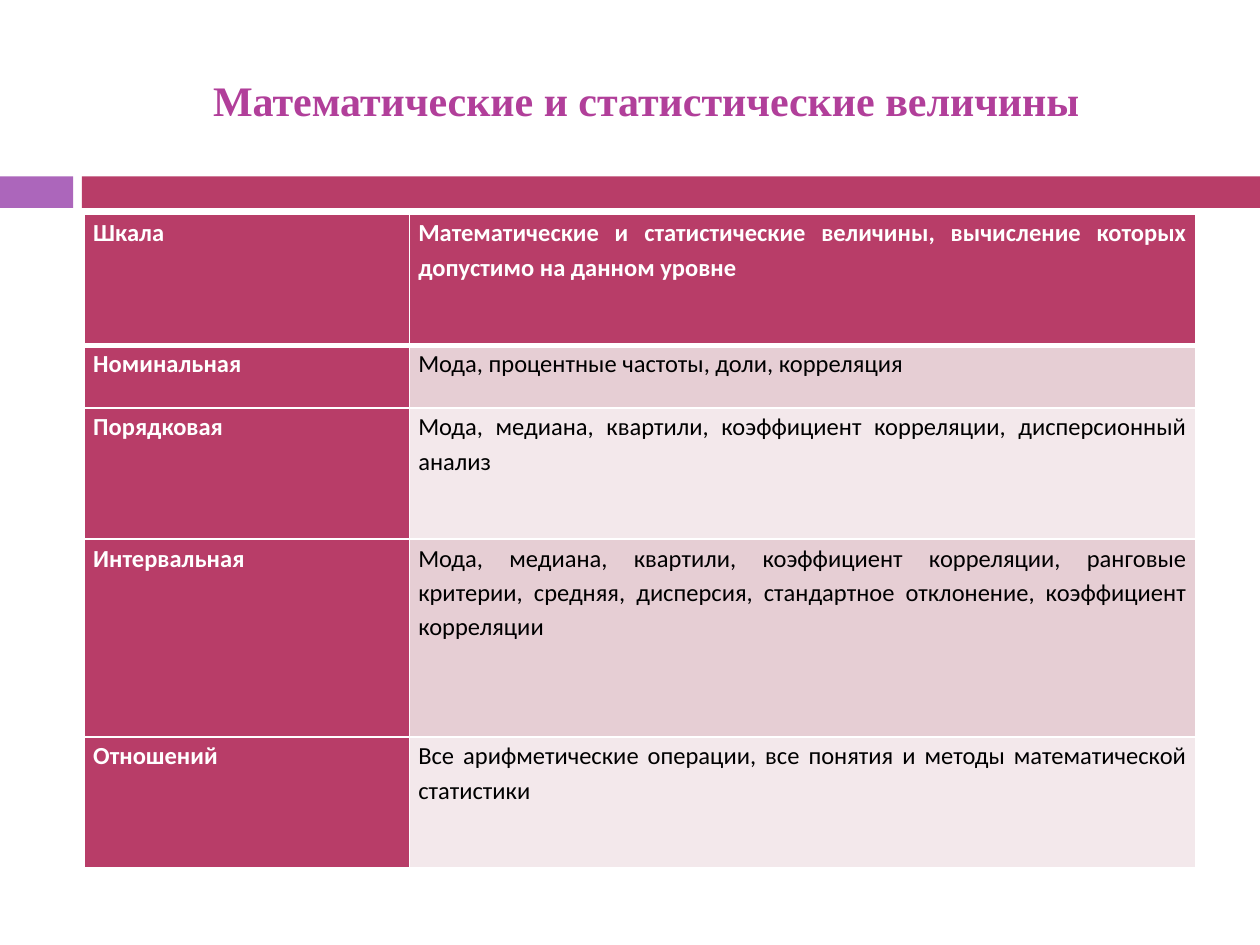
from lxml.etree import SubElement as Sub
from pptx import Presentation
from pptx.dml.color import RGBColor as Rgb
from pptx.enum.shapes import MSO_SHAPE as Shape
from pptx.enum.text import MSO_ANCHOR as Anchor, PP_ALIGN as Align
from pptx.oxml.ns import qn
from pptx.util import Inches, Pt

HUES = {
    "white": "FFFFFF",
    "black": "000000",
    "rose": "B83D68",
    "lilac": "AC66BB",
    "title": "B13F9A",
    "dark": "E6CED4",
    "light": "F3E8EB",
}
COLS = [2.58, 6.24]
ROWS = [
    (1.04, "Шкала", "Математические и статистические величины, "
     "вычисление которых допустимо на данном уровне"),
    (0.5, "Номинальная", "Мода, процентные частоты, доли, корреляция"),
    (1.04, "Порядковая", "Мода, медиана, квартили, коэффициент корреляции, "
     "дисперсионный анализ"),
    (1.57, "Интервальная", "Мода, медиана, квартили, коэффициент корреляции, "
     "ранговые критерии, средняя, дисперсия, стандартное отклонение, "
     "коэффициент корреляции"),
    (1.04, "Отношений", "Все арифметические операции, все понятия и методы "
     "математической статистики"),
]


def paint(fill, hue):
    fill.solid()
    fill.fore_color.rgb = Rgb.from_string(HUES[hue])


def put(frame, text, size=14, font="Calibri", hue="black", bold=False,
        align=Align.JUSTIFY, line=1.15, before=0, after=0):
    para = frame.paragraphs[0]
    para.alignment = align
    para.line_spacing = line
    para.space_before = Pt(before)
    para.space_after = Pt(after)
    run = para.add_run()
    run.text = text
    run.font.size = Pt(size)
    run.font.name = font
    run.font.bold = bold
    run.font.color.rgb = Rgb.from_string(HUES[hue])


def add_bar(slide, left, width, hue):
    bar = slide.shapes.add_shape(
        Shape.RECTANGLE, Inches(left), Inches(1.4), Inches(width), Inches(0.25))
    bar.shadow.inherit = False
    paint(bar.fill, hue)
    bar.line.fill.background()


def add_title(slide, text):
    title = slide.shapes.title
    title.left, title.top = Inches(0.67), Inches(0.25)
    title.width, title.height = Inches(8.92), Inches(1.08)
    title.text_frame.word_wrap = True
    title.text_frame.vertical_anchor = Anchor.MIDDLE
    put(title.text_frame, text, size=24, font="Times New Roman", hue="title",
        bold=True, align=Align.CENTER, line=1.0)


def edge(cell, side, width):
    line = Sub(cell._tc.get_or_add_tcPr(), qn(f"a:ln{side}"), w=str(Pt(width)))
    fill = Sub(line, qn("a:solidFill"))
    Sub(fill, qn("a:srgbClr"), val=HUES["white"])


def set_cell(cell, text, row, col):
    head = row == 0
    key = head or col == 0
    cell.margin_left = cell.margin_right = Inches(0.07)
    cell.margin_top = cell.margin_bottom = 0
    for side in "LRTB":
        thick = (head and side == "B") or (row == 1 and side == "T")
        edge(cell, side, 3 if thick else 1)
    paint(cell.fill, "rose" if key else "dark" if row % 2 else "light")
    put(cell.text_frame, text, hue="white" if key else "black", bold=key,
        before=6 if head else 0, after=6 if head else 10)


def add_grid(slide):
    high = sum(row[0] for row in ROWS)
    grid = slide.shapes.add_table(
        len(ROWS), len(COLS), Inches(0.67), Inches(1.7),
        Inches(sum(COLS)), Inches(high)).table
    for col, width in zip(grid.columns, COLS):
        col.width = Inches(width)
    for row, (height, *texts) in enumerate(ROWS):
        grid.rows[row].height = Inches(height)
        for col, text in enumerate(texts):
            set_cell(grid.cell(row, col), text, row, col)


def main():
    deck = Presentation()
    deck.slide_width, deck.slide_height = Inches(10), Inches(7.5)
    slide = deck.slides.add_slide(deck.slide_layouts[5])
    add_bar(slide, 0, 0.58, "lilac")
    add_bar(slide, 0.65, 9.35, "rose")
    add_title(slide, "Математические и статистические величины")
    add_grid(slide)
    deck.save("out.pptx")


if __name__ == "__main__":
    main()
